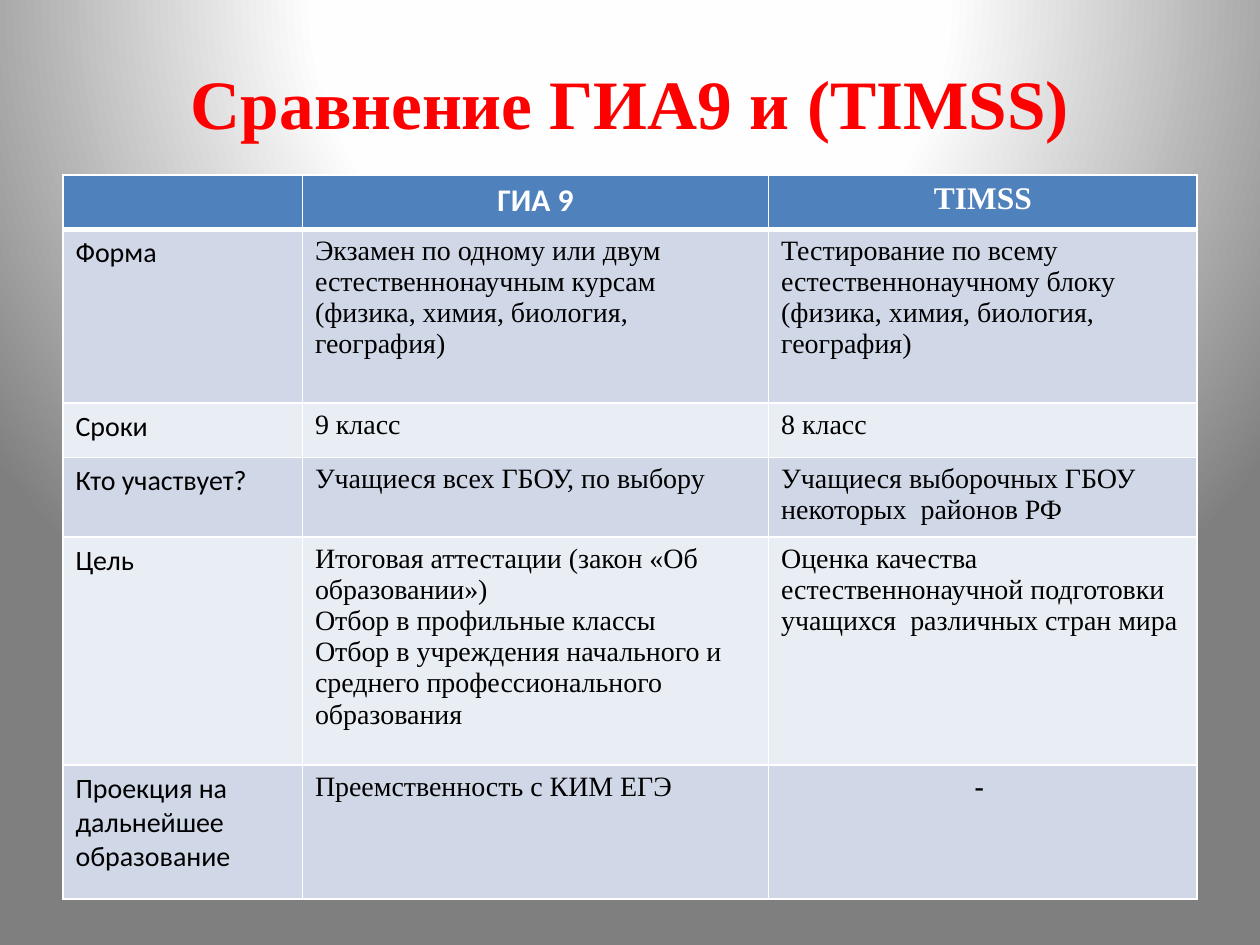
from pptx import Presentation
from pptx.dml.color import RGBColor
from pptx.enum.text import MSO_ANCHOR, PP_ALIGN
from pptx.oxml import parse_xml
from pptx.oxml.ns import nsdecls
from pptx.util import Inches, Pt

RED = RGBColor(0xFF, 0x00, 0x00)
WHITE = RGBColor(0xFF, 0xFF, 0xFF)
BLACK = RGBColor(0x00, 0x00, 0x00)
BLUE = RGBColor(0x4F, 0x81, 0xBD)
BANDS = (RGBColor(0xE9, 0xED, 0xF4), RGBColor(0xD0, 0xD8, 0xE8))
STOPS = ((0, WHITE), (40, RGBColor(0xFE, 0xFE, 0xFE)), (100, RGBColor(0x7F, 0x7F, 0x7F)))
SANS, SERIF = "Calibri", "Times New Roman"

COLS = (1.9, 3.7, 3.4)
ROWS = (0.43, 1.38, 0.43, 0.43, 1.81, 1.06)
CELLS = (
    ("", "ГИА 9", "TIMSS"),
    ("Форма",
     "Экзамен по одному или двум естественнонаучным курсам (физика, химия, биология, география)",
     "Тестирование по всему естественнонаучному блоку (физика, химия, биология, география)"),
    ("Сроки", "9 класс", "8 класс"),
    ("Кто участвует?", "Учащиеся всех ГБОУ, по выбору",
     "Учащиеся выборочных ГБОУ некоторых  районов РФ"),
    ("Цель",
     "Итоговая аттестации (закон «Об образовании»)\n"
     "Отбор в профильные классы\n"
     "Отбор в учреждения начального и среднего профессионального образования",
     "Оценка качества естественнонаучной подготовки учащихся  различных стран мира"),
    ("Проекция на дальнейшее образование", "Преемственность с КИМ ЕГЭ", "- "),
)


def paint(slide):
    """Fill the slide background with a circular gradient."""
    stops = "".join(
        f'<a:gs pos="{pos * 1000}"><a:srgbClr val="{color}"/></a:gs>' for pos, color in STOPS)
    slide._element.cSld.insert(0, parse_xml(
        f'<p:bg {nsdecls("p", "a")}><p:bgPr><a:gradFill rotWithShape="1">'
        f'<a:gsLst>{stops}</a:gsLst><a:path path="circle">'
        '<a:fillToRect l="50000" t="-80000" r="50000" b="180000"/></a:path>'
        '</a:gradFill><a:effectLst/></p:bgPr></p:bg>'))


def write(frame, text, align, color, **format):
    """Put formatted paragraphs into a text frame."""
    frame.text = text
    for para in frame.paragraphs:
        para.alignment = align
        para.font.color.rgb = color
        for run in para.runs:
            run.font.color.rgb = color
            for name, value in format.items():
                setattr(run.font, name, value)


def add_title(slide):
    """Add the slide heading."""
    box = slide.shapes.add_textbox(Inches(0.5), Inches(0.3), Inches(9), Inches(1.01))
    frame = box.text_frame
    frame.word_wrap = True
    frame.vertical_anchor = MSO_ANCHOR.MIDDLE
    write(frame, "Сравнение ГИА9 и (TIMSS)", PP_ALIGN.CENTER, RED,
          name=SERIF, size=Pt(39.6), bold=True)


def edge(cell, head):
    """Draw the white borders of a cell, thicker under the header."""
    for side in "LRTB":
        width = Pt(3 if head and side == "B" else 1)
        cell._tc.get_or_add_tcPr().append(parse_xml(
            f'<a:ln{side} {nsdecls("a")} w="{width}"><a:solidFill>'
            f'<a:srgbClr val="{WHITE}"/></a:solidFill></a:ln{side}>'))


def add_grid(slide):
    """Add the comparison table."""
    table = slide.shapes.add_table(
        len(ROWS), len(COLS), Inches(0.5), Inches(1.39),
        Inches(sum(COLS)), Inches(sum(ROWS))).table
    for col, width in zip(table.columns, COLS):
        col.width = Inches(width)
    for i, (row, height, texts) in enumerate(zip(table.rows, ROWS, CELLS)):
        row.height = Inches(height)
        head = i == 0
        for j, (cell, text) in enumerate(zip(row.cells, texts)):
            mid = head or text == "- "
            edge(cell, head)
            cell.fill.solid()
            cell.fill.fore_color.rgb = BLUE if head else BANDS[i % 2]
            write(cell.text_frame, text, PP_ALIGN.CENTER if mid else PP_ALIGN.LEFT,
                  WHITE if head else BLACK, bold=mid, size=Pt(18 if head else 16),
                  name=SANS if j == 0 or (head and j == 1) else SERIF)


def main():
    """Build and save the slide."""
    deck = Presentation()
    deck.slide_width, deck.slide_height = Inches(10), Inches(7.5)
    slide = deck.slides.add_slide(deck.slide_layouts[6])
    paint(slide)
    add_title(slide)
    add_grid(slide)
    deck.save("out.pptx")


if __name__ == "__main__":
    main()
